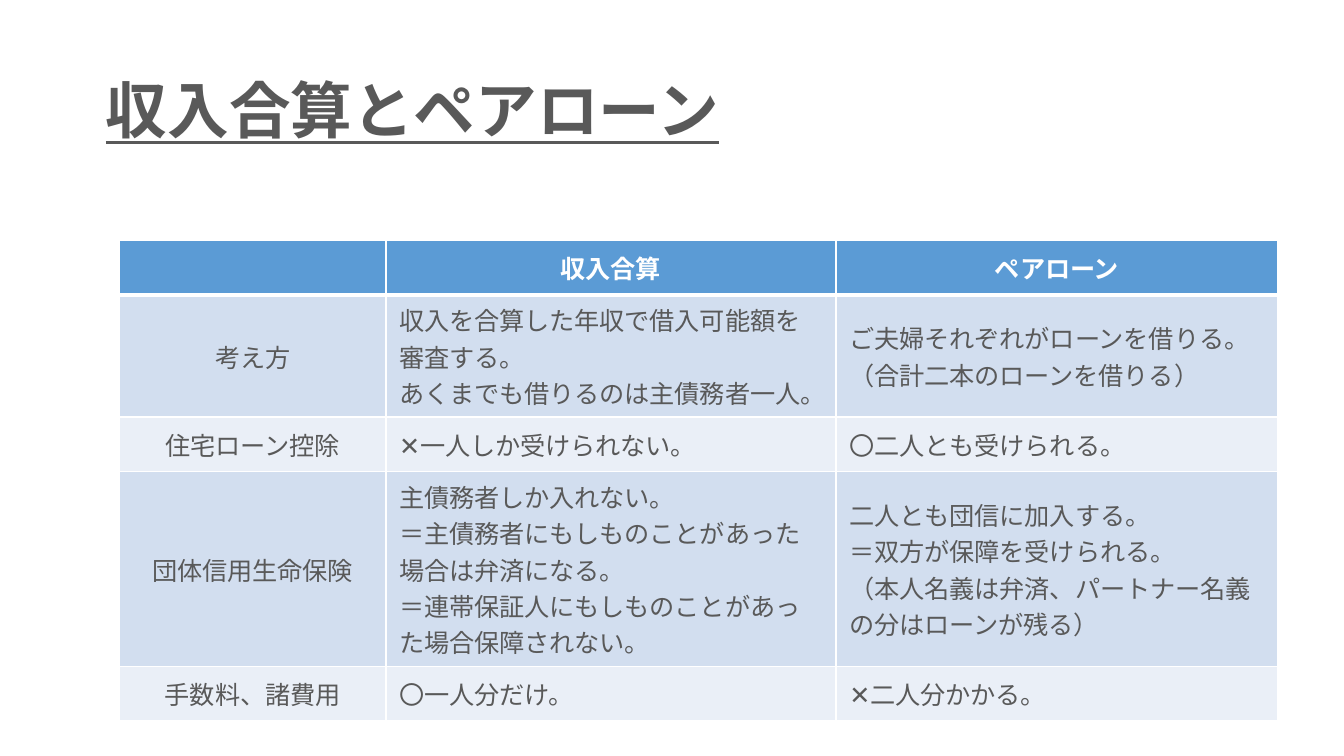
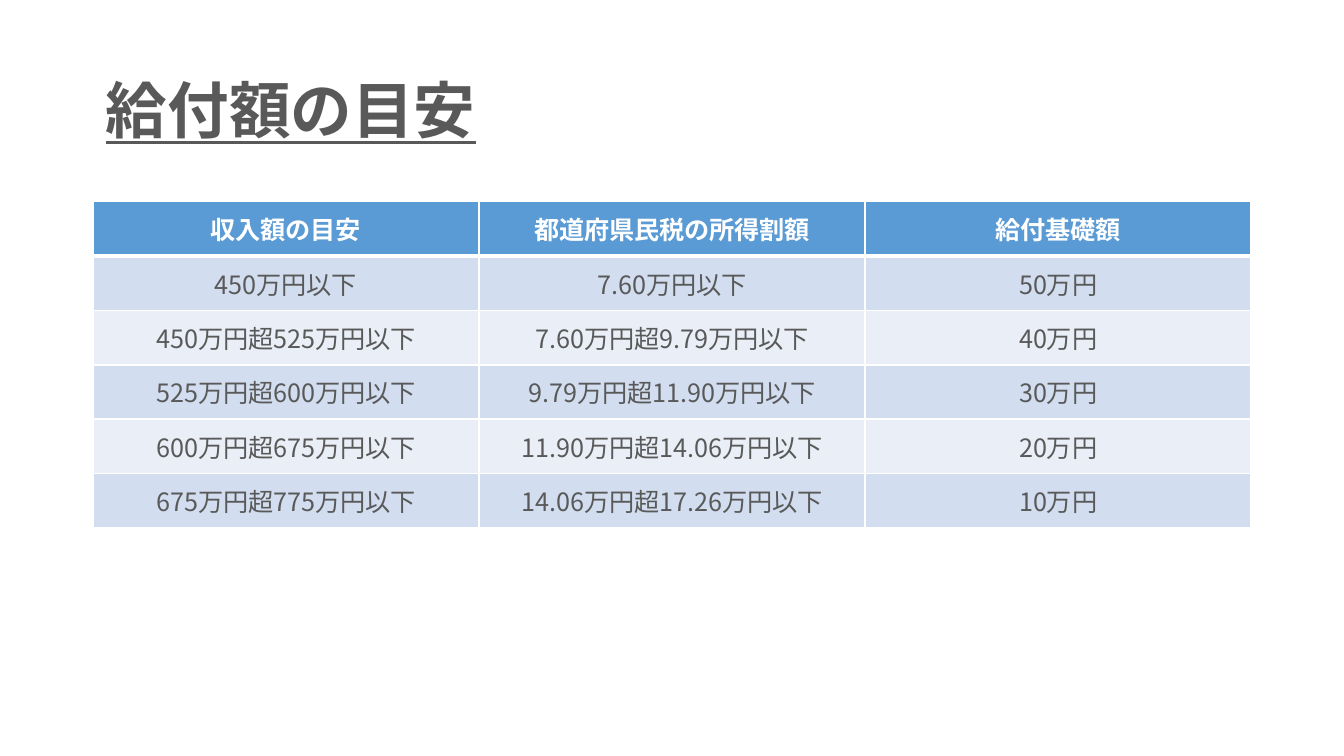
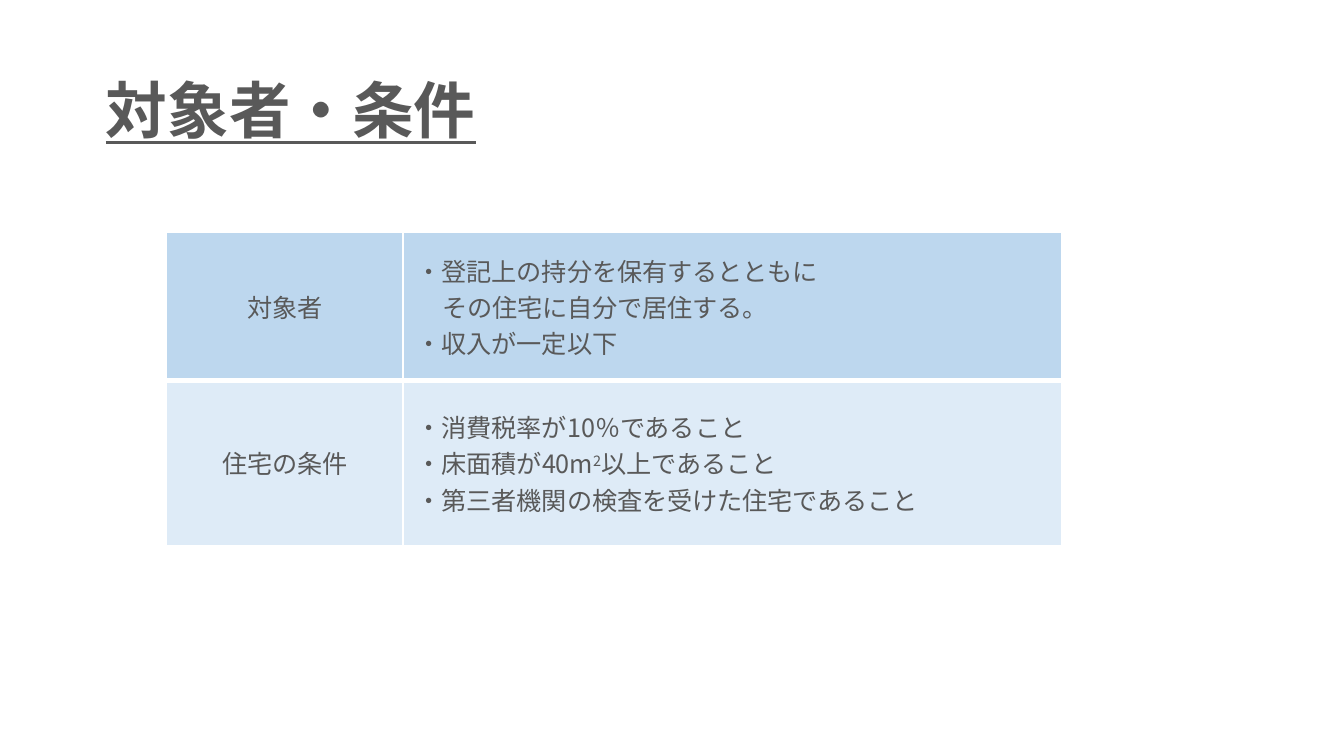
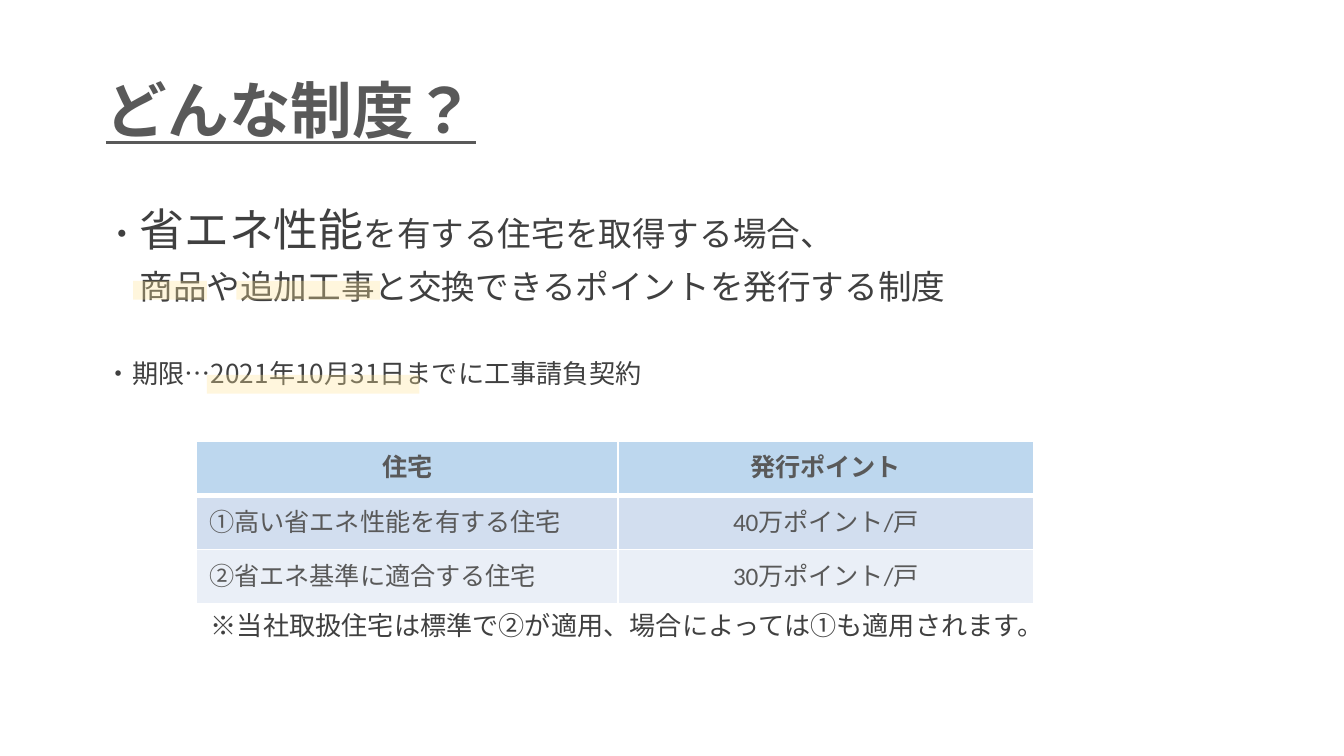
from dataclasses import dataclass

from lxml.etree import SubElement
from pptx import Presentation
from pptx.dml.color import RGBColor
from pptx.enum.shapes import MSO_SHAPE
from pptx.enum.text import MSO_ANCHOR, PP_ALIGN
from pptx.oxml import parse_xml
from pptx.oxml.ns import nsdecls, qn
from pptx.util import Inches, Pt

NOTO = "Noto Sans CJK JP"
CALIBRI = "Calibri"
GREY = "595959"
DARK = "404040"
WHITE = "FFFFFF"
BLUE = "5B9BD5"
SKY = "BDD7EE"
PALE_SKY = "DEEBF7"
BANDS = ("D2DEEF", "EAEFF7")
MARKER = "FFE699"
MARKER_OPACITY = 33
LINE_SPACING = 0.9
ROW_HEIGHT = 2.43 / 6


@dataclass
class Span:
    text: str
    size: float = None
    bold: bool = None
    superscript: bool = False


@dataclass
class Line:
    spans: list
    size: float = 13.5
    indent: float = 0
    before: float = 0


@dataclass
class Grid:
    left: float
    top: float
    columns: tuple
    alignment: str
    rows: list
    font: str = NOTO
    header: bool = True
    header_fill: str = BLUE
    header_color: str = WHITE
    fills: tuple = BANDS
    heights: tuple = None
    anchor: MSO_ANCHOR = MSO_ANCHOR.MIDDLE


LOAN_COMPARISON = Grid(
    0.89, 1.79, (1.98, 3.35, 3.29), "cll",
    [
        ["", "収入合算", "ペアローン"],
        ["考え方",
         "収入を合算した年収で借入可能額を\n審査する。\nあくまでも借りるのは主債務者一人。",
         "ご夫婦それぞれがローンを借りる。\n（合計二本のローンを借りる）"],
        ["住宅ローン控除",
         [Line([Span("✕", bold=True), Span("一人しか受けられない。")])],
         "〇二人とも受けられる。"],
        ["団体信用生命保険",
         "主債務者しか入れない。\n＝主債務者にもしものことがあった場合は弁済になる。\n"
         "＝連帯保証人にもしものことがあった場合保障されない。",
         "二人とも団信に加入する。\n＝双方が保障を受けられる。\n"
         "（本人名義は弁済、パートナー名義の分はローンが残る）"],
        ["手数料、諸費用", "〇一人分だけ。", "✕二人分かかる。"],
    ],
    font=CALIBRI, heights=(ROW_HEIGHT, 0.91, ROW_HEIGHT, 1.45, ROW_HEIGHT),
)

BENEFITS = Grid(
    0.69, 1.5, (8.62 / 3,) * 3, "ccc",
    [
        ["収入額の目安", "都道府県民税の所得割額", "給付基礎額"],
        ["450万円以下", "7.60万円以下", "50万円"],
        ["450万円超525万円以下", "7.60万円超9.79万円以下", "40万円"],
        ["525万円超600万円以下", "9.79万円超11.90万円以下", "30万円"],
        ["600万円超675万円以下", "11.90万円超14.06万円以下", "20万円"],
        ["675万円超775万円以下", "14.06万円超17.26万円以下", "10万円"],
    ],
)

CONDITIONS = Grid(
    1.24, 1.73, (1.76, 4.9), "cl",
    [
        ["対象者",
         [Line([Span("・登記上の持分を保有するとともに")]),
          Line([Span("その住宅に自分で居住する。")], indent=0.19),
          Line([Span("・収入が一定以下")])]],
        ["住宅の条件",
         [Line([Span("・消費税率が10％であること")]),
          Line([Span("・床面積が40m"), Span("2", superscript=True),
                Span("以上であること")]),
          Line([Span("・第三者機関の検査を受けた住宅であること")])]],
    ],
    header=False, fills=(SKY, PALE_SKY), heights=(1.1, 1.23),
)

POINTS = Grid(
    1.46, 3.28, (3.14, 3.09), "lc",
    [
        ["住宅", "発行ポイント"],
        ["①高い省エネ性能を有する住宅", "40万ポイント/戸"],
        ["②省エネ基準に適合する住宅", "30万ポイント/戸"],
    ],
    font=CALIBRI, header_fill=SKY, header_color=GREY, anchor=MSO_ANCHOR.TOP,
)

PROGRAM_LINES = [
    Line([Span("・"), Span("省エネ性能", size=24), Span("を有する住宅を取得する場合、")], 18),
    Line([Span("商品や追加工事と交換できるポイントを発行する制度")], 18, 0.25, 7.5),
    Line([Span("・期限…2021年10月31日までに工事請負契約")], 14, 0, 29),
    Line([Span("※当社取扱住宅は標準で②が適用、場合によっては①も適用されます。")], 14, 0.78, 120),
]
MARKERS = [(0.99, 2.09, 0.55), (1.76, 2.09, 1.07), (1.54, 2.79, 1.58)]

SLIDES = [
    ("収入合算とペアローン", LOAN_COMPARISON, [], []),
    ("給付額の目安", BENEFITS, [], []),
    ("対象者・条件", CONDITIONS, [], []),
    ("どんな制度？", POINTS, PROGRAM_LINES, MARKERS),
]


def paint(color, value):
    color.rgb = RGBColor.from_string(value)


def style(paragraph, size, color, font=NOTO, bold=False):
    paragraph.font.size = Pt(size)
    paragraph.font.bold = bold
    paragraph.font.name = font
    paint(paragraph.font.color, color)
    properties = paragraph._p.get_or_add_pPr().find(qn("a:defRPr"))
    SubElement(properties, qn("a:ea")).set("typeface", NOTO)


def write(frame, lines, color, font=NOTO, bold=False, align=PP_ALIGN.LEFT, spacing=None):
    for index, line in enumerate(lines):
        paragraph = frame.paragraphs[0] if index == 0 else frame.add_paragraph()
        paragraph.alignment = align
        if spacing:
            paragraph.line_spacing = spacing
        if line.before:
            paragraph.space_before = Pt(line.before)
        if line.indent:
            paragraph._p.get_or_add_pPr().set("marL", str(Inches(line.indent)))
        style(paragraph, line.size, color, font, bold)
        for span in line.spans:
            run = paragraph.add_run()
            run.text = span.text
            properties = run._r.get_or_add_rPr()
            properties.set("lang", "ja-JP")
            properties.set("altLang", "en-US")
            if span.size:
                run.font.size = Pt(span.size)
            if span.bold:
                run.font.bold = True
            if span.superscript:
                properties.set("baseline", "30000")


def add_box(page, top, height, anchor):
    box = page.shapes.add_textbox(Inches(0.69), Inches(top), Inches(8.62), Inches(height))
    frame = box.text_frame
    frame.word_wrap = True
    frame.vertical_anchor = anchor
    return frame


def add_title(page, text):
    frame = add_box(page, 0.3, 1.09, MSO_ANCHOR.MIDDLE)
    write(frame, [Line([Span(text)], 33)], GREY, bold=True, spacing=LINE_SPACING)
    frame.paragraphs[0].font.underline = True


def add_marker(page, left, top, width):
    marker = page.shapes.add_shape(
        MSO_SHAPE.RECTANGLE, Inches(left), Inches(top), Inches(width), Inches(0.14))
    marker.shadow.inherit = False
    marker.line.fill.background()
    marker.fill.solid()
    paint(marker.fill.fore_color, MARKER)
    color = marker._element.spPr.find(qn("a:solidFill"))[0]
    SubElement(color, qn("a:alpha")).set("val", str(MARKER_OPACITY * 1000))


def add_borders(cell, row):
    widths = {"L": 1, "R": 1, "T": 3 if row == 1 else 1, "B": 3 if row == 0 else 1}
    properties = cell._tc.get_or_add_tcPr()
    for position, (side, width) in enumerate(widths.items()):
        properties.insert(position, parse_xml(
            f'<a:ln{side} {nsdecls("a")} w="{Pt(width)}"><a:solidFill>'
            f'<a:srgbClr val="{WHITE}"/></a:solidFill></a:ln{side}>'))


def add_grid(page, grid):
    heights = grid.heights or (ROW_HEIGHT,) * len(grid.rows)
    table = page.shapes.add_table(
        len(grid.rows), len(grid.columns), Inches(grid.left), Inches(grid.top),
        Inches(sum(grid.columns)), Inches(sum(heights))).table
    for column, width in zip(table.columns, grid.columns):
        column.width = Inches(width)
    for row, (values, height) in enumerate(zip(grid.rows, heights)):
        table.rows[row].height = Inches(height)
        heading = grid.header and row == 0
        fill = grid.header_fill if heading else grid.fills[(row - grid.header) % 2]
        for column, value in enumerate(values):
            cell = table.cell(row, column)
            cell.vertical_anchor = grid.anchor
            cell.fill.solid()
            paint(cell.fill.fore_color, fill)
            add_borders(cell, row)
            if isinstance(value, str):
                value = [Line([Span(text)] if text else []) for text in value.split("\n")]
            centred = heading or grid.alignment[column] == "c"
            write(cell.text_frame, value, grid.header_color if heading else GREY,
                  grid.font, heading, PP_ALIGN.CENTER if centred else PP_ALIGN.LEFT)


def main():
    deck = Presentation()
    deck.slide_width = Inches(10)
    deck.slide_height = Inches(10 * 9 / 16)
    for title, grid, lines, markers in SLIDES:
        page = deck.slides.add_slide(deck.slide_layouts[6])
        add_title(page, title)
        if lines:
            write(add_box(page, 1.5, 3.57, MSO_ANCHOR.TOP), lines, DARK, spacing=LINE_SPACING)
        for marker in markers:
            add_marker(page, *marker)
        add_grid(page, grid)
    deck.save("out.pptx")


if __name__ == "__main__":
    main()
